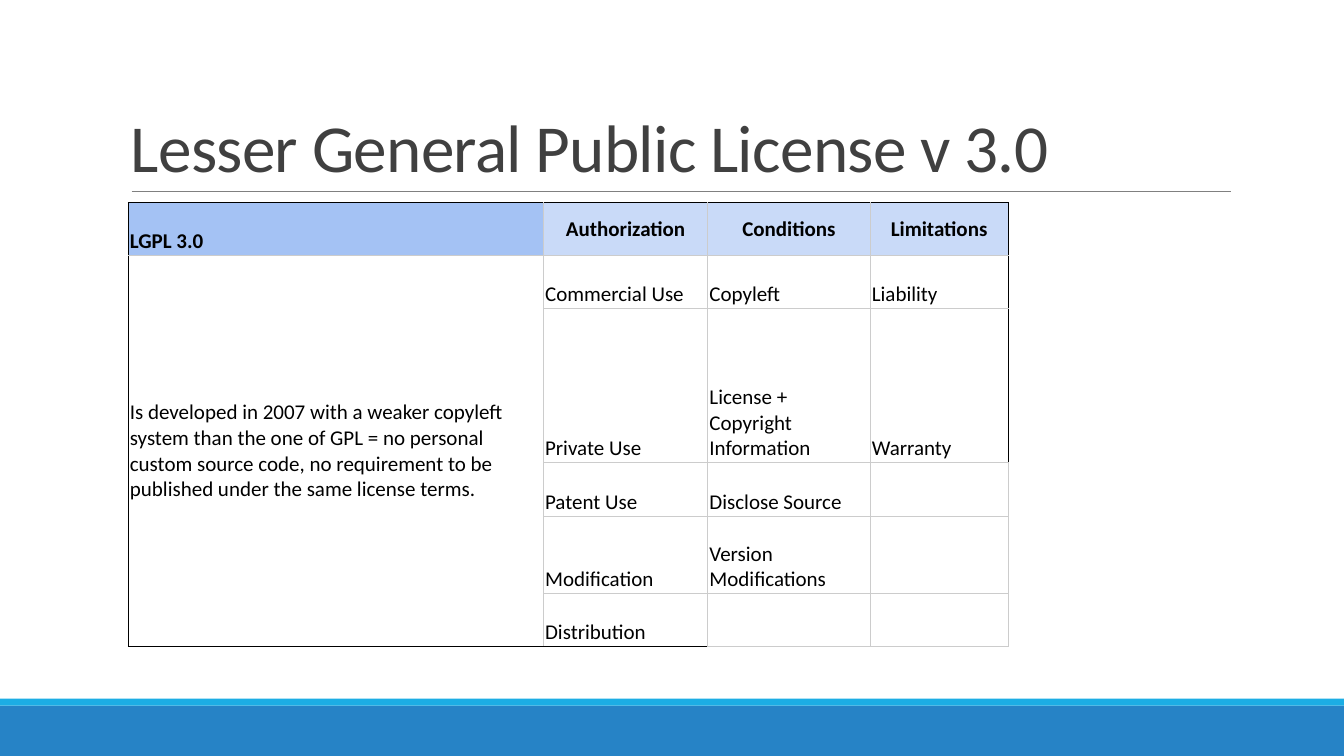
from lxml import etree
from pptx import Presentation
from pptx import util as u
from pptx.dml import color
from pptx.enum import shapes, text
from pptx.oxml import ns

COLORS = {
    "title": "404040", "text": "000000", "rule": "808080",
    "footer": "2683C6", "stripe": "1CADE4",
    "name": "A4C2F4", "header": "C9DAF8",
    "edge": "000000", "grid": "CCCCCC",
}
COLUMNS = [296.6, 117.4, 116, 98.6]
ROWS = [38, 38, 110, 38, 55.5, 38]
LICENSE = [
    ["LGPL 3.0", "Authorization", "Conditions", "Limitations"],
    ["Is developed in 2007 with a weaker copyleft system than the one of GPL "
     "= no personal custom source code, no requirement to be published under "
     "the same license terms.", "Commercial Use", "Copyleft", "Liability"],
    ["", "Private Use", "License + Copyright Information", "Warranty"],
    ["", "Patent Use", "Disclose Source", ""],
    ["", "Modification", "Version Modifications", ""],
    ["", "Distribution", "", ""],
]


def rgb(name):
    return color.RGBColor.from_string(COLORS[name])


def write(frame, words, size=15, ink="text", bold=False, align="LEFT",
          anchor="BOTTOM", leading=None, tracking=None):
    frame.word_wrap = True
    frame.vertical_anchor = text.MSO_ANCHOR[anchor]
    para = frame.paragraphs[0]
    para.alignment = text.PP_ALIGN[align]
    para.line_spacing = leading
    para.font.size = u.Pt(size)
    if not words:
        return
    span = para.add_run()
    span.text = words
    span.font.name = "Calibri"
    span.font.size = u.Pt(size)
    span.font.bold = bold
    span.font.color.rgb = rgb(ink)
    if tracking:
        span.font._element.set("spc", str(round(tracking * 100)))


class Page:
    """Draws styled elements on one slide, measured in points."""

    def __init__(self, deck):
        self.shapes = deck.slides.add_slide(deck.slide_layouts[6]).shapes

    def bar(self, left, top, width, height, fill):
        box = self.shapes.add_shape(shapes.MSO_SHAPE.RECTANGLE,
                                    *map(u.Pt, (left, top, width, height)))
        box.shadow.inherit = False
        box.fill.solid()
        box.fill.fore_color.rgb = rgb(fill)
        box.line.fill.background()

    def rule(self, left, right, top, ink, weight):
        line = self.shapes.add_connector(shapes.MSO_CONNECTOR.STRAIGHT,
                                         *map(u.Pt, (left, top, right, top)))
        line.line.color.rgb = rgb(ink)
        line.line.width = u.Pt(weight)
        etree.SubElement(line._element.spPr, ns.qn("a:effectLst"))

    def label(self, left, top, width, height, words, **style):
        box = self.shapes.add_textbox(*map(u.Pt, (left, top, width, height)))
        write(box.text_frame, words, **style)

    def border(self, cell, sides):
        for side, ink in sides.items():
            line = etree.SubElement(cell._tc.get_or_add_tcPr(),
                                    ns.qn("a:ln" + side), w=str(u.Pt(0.6)))
            fill = etree.SubElement(line, ns.qn("a:solidFill"))
            etree.SubElement(fill, ns.qn("a:srgbClr"), val=COLORS[ink])

    def cell(self, cell, words, sides, fill=None, **style):
        cell.margin_left = cell.margin_right = u.Pt(1.2)
        cell.margin_top = cell.margin_bottom = u.Pt(0.8)
        write(cell.text_frame, words, **style)
        cell.vertical_anchor = text.MSO_ANCHOR[style.get("anchor", "BOTTOM")]
        self.border(cell, sides)
        if fill:
            cell.fill.solid()
            cell.fill.fore_color.rgb = rgb(fill)
        else:
            cell.fill.background()

    def license_table(self, left, top):
        frame = self.shapes.add_table(
            len(ROWS), len(COLUMNS), u.Pt(left), u.Pt(top),
            u.Pt(sum(COLUMNS)), u.Pt(sum(ROWS)))
        table = frame.table
        table.first_row = table.horz_banding = False
        for column, width in zip(table.columns, COLUMNS):
            column.width = u.Pt(width)
        for row, height in zip(table.rows, ROWS):
            row.height = u.Pt(height)
        table.cell(1, 0).merge(table.cell(len(ROWS) - 1, 0))
        for r, line in enumerate(LICENSE):
            for c, words in enumerate(line):
                cell = table.cell(r, c)
                if cell.is_spanned:
                    continue
                last = cell.is_merge_origin or r == len(ROWS) - 1
                outer = {"L": c == 0, "R": c == 3 and r < 3,
                         "T": r == 0, "B": last and c < 2}
                sides = {side: "edge" if out else "grid"
                         for side, out in outer.items()}
                style = {}
                if r == 0:
                    style = {"bold": True, "fill": "header" if c else "name"}
                    if c:
                        style.update(align="CENTER", anchor="MIDDLE")
                elif c == 0:
                    style = {"anchor": "MIDDLE"}
                self.cell(cell, words, sides, **style)


def main():
    deck = Presentation()
    deck.slide_width, deck.slide_height = u.Pt(960), u.Pt(540)
    page = Page(deck)
    page.bar(0, 504, 960, 36, "footer")
    page.bar(0, 499, 960, 5, "stripe")
    page.rule(94, 879, 136.8, "rule", 0.5)
    page.label(86.4, 22.5, 792, 114.3, "Lesser General Public License v 3.0",
               size=48, ink="title", leading=0.85, tracking=-0.5)
    page.license_table(91.6, 144.6)
    deck.save("out.pptx")


if __name__ == "__main__":
    main()
